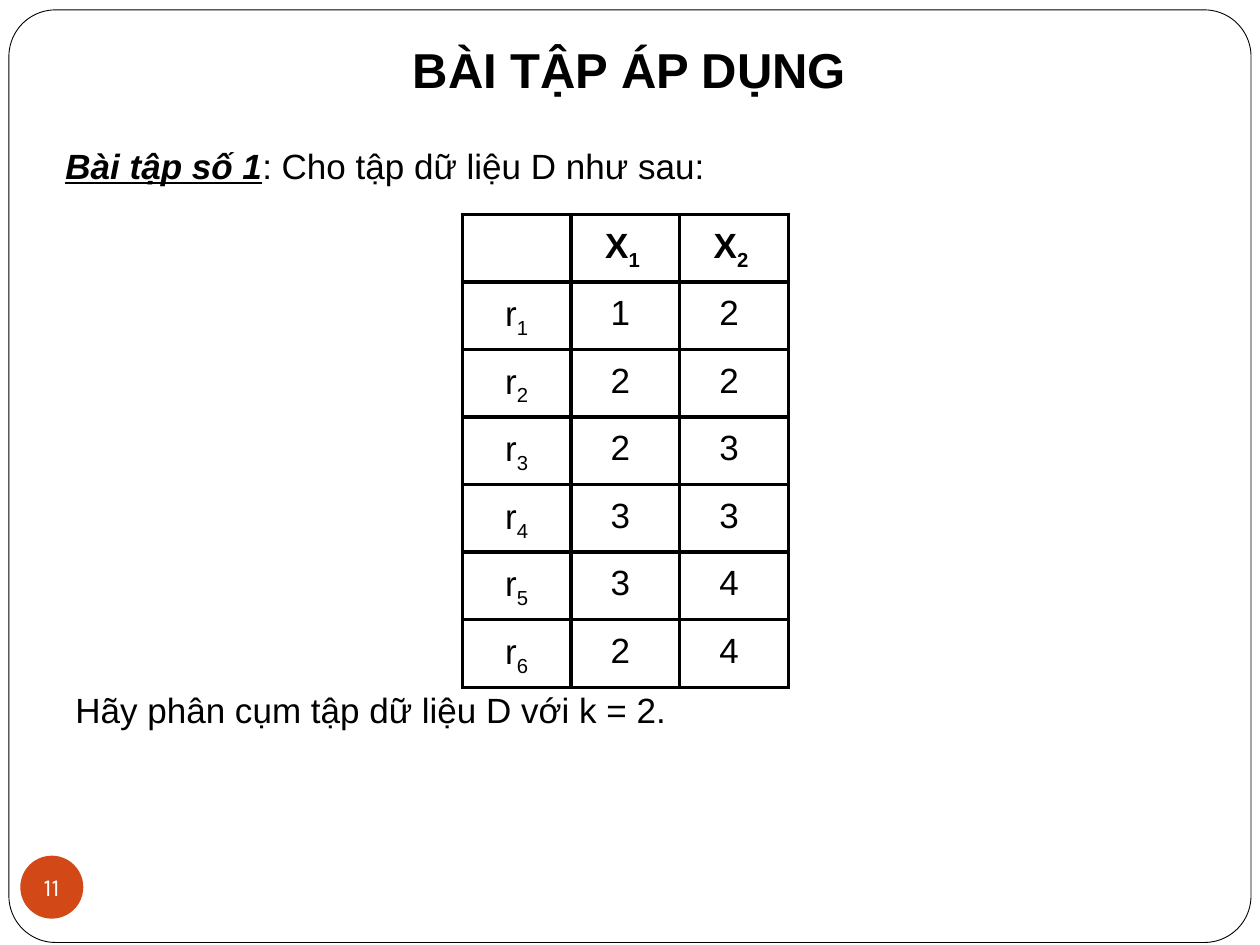
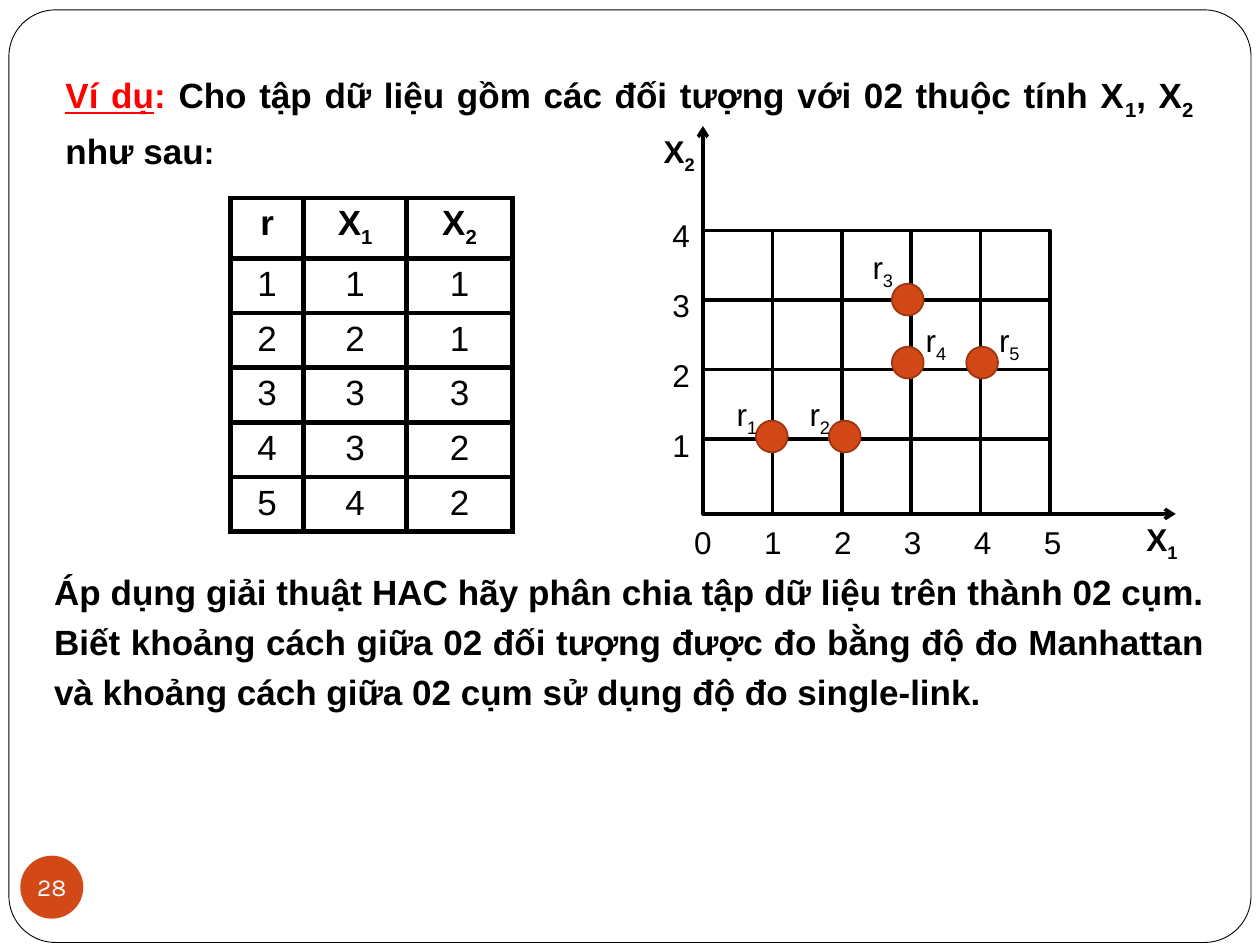
import pptx
import pptx.dml.color
import pptx.enum.shapes
import pptx.enum.text
import pptx.oxml
import pptx.oxml.ns
import pptx.util
from lxml import etree

Cm = pptx.util.Cm
Pt = pptx.util.Pt
SHAPES = pptx.enum.shapes.MSO_SHAPE
ALIGN = pptx.enum.text.PP_ALIGN
ANCHOR = pptx.enum.text.MSO_ANCHOR
qn = pptx.oxml.ns.qn

COLORS = {
    "ink": "000000",
    "paper": "FFFFFF",
    "accent": "D34817",
    "accent_edge": "9C3511",
    "alert": "FF0000",
}
FONT = "Arial"
BADGE_FONT = "Karla"
TITLE_ONLY, BLANK = 5, 6

CLUSTER_ROWS = [(1, 2), (2, 2), (2, 3), (3, 3), (3, 4), (2, 4)]
OBJECT_ROWS = [(1, 1), (2, 1), (3, 3), (3, 2), (4, 2)]
POINTS = [
    ("1", 1.07, 5.94, -0.64, -0.64),
    ("2", 2.54, 5.94, -0.64, -0.64),
    ("3", 3.81, 3.18, -0.64, -0.84),
    ("4", 3.81, 4.45, 0.43, -0.64),
    ("5", 5.31, 4.45, 0.41, -0.64),
]


def color(name):
    """Return a named colour as RGB."""
    return pptx.dml.color.RGBColor.from_string(COLORS[name])


def place(box):
    """Turn a box in centimetres into lengths."""
    return [Cm(value) for value in box]


def indexed(letter, index, style=""):
    """Return the runs of a letter with a subscript."""
    return [(letter, style), (index, style + " sub")]


def write(text_frame, runs, size=20, align=None, spacing=None, ink="ink", font=FONT):
    """Write (text, style words) runs as one formatted paragraph."""
    paragraph = text_frame.paragraphs[0]
    paragraph.alignment = align
    if spacing:
        paragraph.line_spacing = spacing
    for text, style in runs:
        words = style.split()
        run = paragraph.add_run()
        run.text = text
        run.font.name = font
        run.font.size = Pt(18 if "small" in words else size)
        run.font.bold = "bold" in words
        run.font.italic = "italic" in words
        run.font.underline = "underline" in words
        run.font.color.rgb = color("alert" if "alert" in words else ink)
        if "sub" in words:
            run.font._element.set("baseline", "-25000")


def add_text(slide, box, runs, **options):
    """Add a wrapping text box."""
    text_frame = slide.shapes.add_textbox(*place(box)).text_frame
    text_frame.word_wrap = True
    write(text_frame, runs, **options)


def add_shape(slide, kind, box, fill=None, line=None, width=1):
    """Add a preset shape without a shadow."""
    shape = slide.shapes.add_shape(kind, *place(box))
    shape.shadow.inherit = False
    if fill:
        shape.fill.solid()
        shape.fill.fore_color.rgb = color(fill)
    else:
        shape.fill.background()
    if line:
        shape.line.color.rgb = color(line)
        shape.line.width = Pt(width)
    else:
        shape.line.fill.background()
    return shape


def add_axis(slide, start, end):
    """Add an axis line with an open arrowhead at its end."""
    connector = slide.shapes.add_connector(
        pptx.enum.shapes.MSO_CONNECTOR.STRAIGHT, *place(start + end))
    connector.line.color.rgb = color("ink")
    connector.line.width = Pt(2)
    line = connector.line._get_or_add_ln()
    etree.SubElement(line, qn("a:tailEnd"), type="arrow")
    etree.SubElement(connector._element.spPr, qn("a:effectLst"))


def set_borders(cell, width):
    """Draw the four borders of a table cell."""
    properties = cell._tc.get_or_add_tcPr()
    for side in ("lnL", "lnR", "lnT", "lnB"):
        line = etree.SubElement(properties, qn("a:" + side), w=str(Pt(width)))
        fill = etree.SubElement(line, qn("a:solidFill"))
        etree.SubElement(fill, qn("a:srgbClr"), val=COLORS["ink"])


def add_table(slide, left, top, widths, heights, rows, border, spacing=None):
    """Add a ruled table whose cells are lists of runs."""
    box = (left, top, sum(widths), sum(heights))
    table = slide.shapes.add_table(len(rows), len(widths), *place(box)).table
    for column, width in zip(table.columns, widths):
        column.width = Cm(width)
    for row, height, contents in zip(table.rows, heights, rows):
        row.height = Cm(height)
        for cell, runs in zip(row.cells, contents):
            set_borders(cell, border)
            cell.fill.background()
            write(cell.text_frame, runs, align=ALIGN.CENTER, spacing=spacing)


def add_slide(presentation, layout, number):
    """Add a slide with the rounded frame and the number badge."""
    slide = presentation.slides.add_slide(presentation.slide_layouts[layout])
    frame = add_shape(slide, SHAPES.ROUNDED_RECTANGLE, (0.18, 0.2, 25.04, 18.8),
                      "paper", "ink", 0.5)
    frame.adjustments[0] = 0.05
    badge = add_shape(slide, SHAPES.OVAL, (0.41, 17.25, 1.27, 1.27), "accent")
    text_frame = badge.text_frame
    text_frame.word_wrap = False
    text_frame.vertical_anchor = ANCHOR.MIDDLE
    text_frame.margin_left = text_frame.margin_right = 0
    text_frame.margin_top = text_frame.margin_bottom = 0
    write(text_frame, [(str(number), "")], 14, ALIGN.CENTER, ink="paper", font=BADGE_FONT)
    return slide


def set_title(slide, box, text):
    """Place, fill and format the title on top of the frame."""
    title = slide.shapes.title
    title.left, title.top, title.width, title.height = place(box)
    title.text_frame.vertical_anchor = ANCHOR.MIDDLE
    write(title.text_frame, [(text, "bold")], 28, ALIGN.CENTER)
    slide.shapes._spTree.append(title._element)


def add_scatter(slide, left, top):
    """Draw the grid, axes, ticks and points from the tip of the X2 axis."""
    cell, pitch, grid_top, base = 1.4, 1.41, 2.11, 7.82
    for row in range(4):
        height = cell if row < 3 else base - grid_top - 3 * cell
        for column in range(5):
            box = (left + column * cell, top + grid_top + row * cell, cell, height)
            add_shape(slide, SHAPES.RECTANGLE, box, line="ink", width=2)
    add_axis(slide, (left, top + grid_top), (left, top))
    add_axis(slide, (left, top + base), (left + 9.53, top + base))

    ticks = [(str(i), i * pitch - 0.5, base + 0.05) for i in range(6)]
    ticks += [(str(4 - i), -0.94, 1.7 + i * pitch) for i in range(4)]
    for text, x, y in ticks:
        add_text(slide, (left + x, top + y, 1, 1.02), [(text, "")],
                 size=18, align=ALIGN.CENTER)
    for index, x, y in (("1", 8.69, base), ("2", -1.04, 0)):
        add_text(slide, (left + x, top + y, 1.27, 1.07), indexed("X", index, "bold"), size=18)
    for index, x, y, shift_x, shift_y in POINTS:
        add_shape(slide, SHAPES.OVAL, (left + x, top + y, 0.64, 0.64),
                  "accent", "accent_edge")
        add_text(slide, (left + x + shift_x, top + y + shift_y, 1.07, 1.07),
                 indexed("r", index), size=18)


def build_exercise(presentation):
    """Build the clustering exercise slide."""
    slide = add_slide(presentation, TITLE_ONLY, 11)
    set_title(slide, (0.2, 0.66, 24.97, 1.45), "BÀI TẬP ÁP DỤNG")
    add_text(slide, (1.07, 2.36, 23.29, 1.7),
             [("Bài tập số 1", "bold italic underline"), (": Cho tập dữ liệu D như sau:", "")],
             align=ALIGN.JUSTIFY, spacing=1.5)
    add_text(slide, (1.27, 13.34, 14.4, 1.47),
             [("Hãy phân cụm tập dữ liệu D với k = 2.", "")],
             align=ALIGN.JUSTIFY, spacing=1.5)
    rows = [[[], indexed("X", "1 ", "bold"), indexed("X", "2 ", "bold")]]
    for number, values in enumerate(CLUSTER_ROWS, 1):
        rows.append([indexed("r", str(number))] + [[(f"{value} ", "")] for value in values])
    add_table(slide, 9.32, 4.32, [2.19] * 3, [1.29] * 7, rows, 2.25, 1.15)


def build_example(presentation):
    """Build the HAC example slide."""
    slide = add_slide(presentation, BLANK, 28)
    intro = [("Ví dụ", "bold underline alert"), (": ", "bold alert"),
             ("Cho tập dữ liệu gồm các đối tượng với 02 thuộc tính X", "bold"),
             ("1", "bold sub"), (", X", "bold"), ("2 ", "bold sub"),
             ("như sau", "bold"), (":", "bold small")]
    add_text(slide, (1.07, 1.17, 23.24, 2.31), intro, align=ALIGN.JUSTIFY, spacing=1.2)
    rows = [[[("r", "bold")], indexed("X", "1", "bold"), indexed("X", "2", "bold")]]
    for number, values in enumerate(OBJECT_ROWS, 1):
        rows.append([[(str(value), "")] for value in (number, *values)])
    add_table(slide, 4.65, 3.99, [1.47, 2.08, 2.13], [1.2] + [1.1] * 5, rows, 3)
    task = ("Áp dụng giải thuật HAC hãy phân chia tập dữ liệu trên thành 02 cụm. "
            "Biết khoảng cách giữa 02 đối tượng được đo bằng độ đo Manhattan "
            "và khoảng cách giữa 02 cụm sử dụng độ đo single-link.")
    add_text(slide, (0.84, 11.2, 23.7, 3.33), [(task, "bold")],
             align=ALIGN.JUSTIFY, spacing=1.2)
    add_scatter(slide, 14.17, 2.54)


def main():
    """Build and save the presentation."""
    presentation = pptx.Presentation()
    presentation.slide_width, presentation.slide_height = Cm(25.4), Cm(19.05)
    build_exercise(presentation)
    build_example(presentation)
    presentation.save("out.pptx")


if __name__ == "__main__":
    main()
